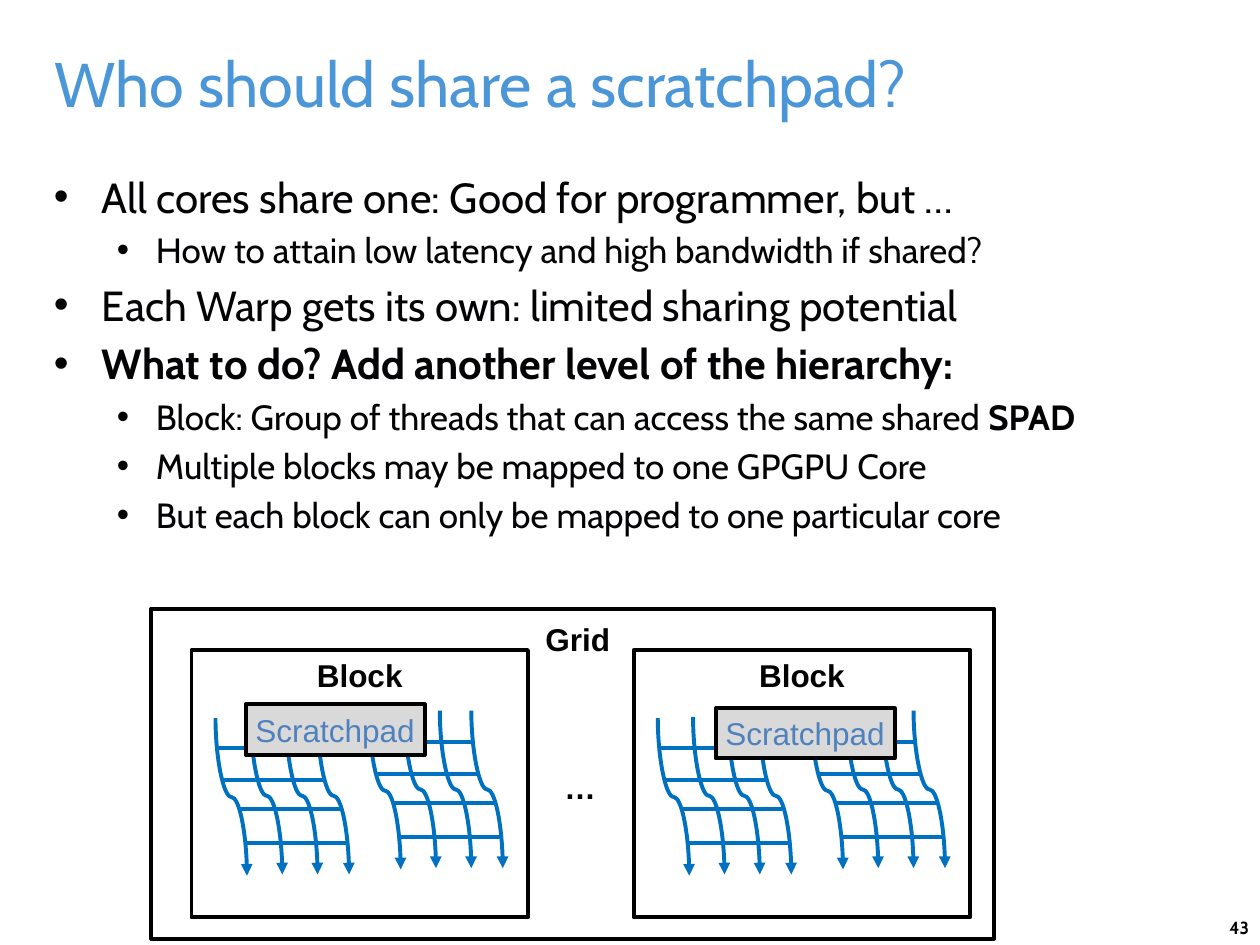
from dataclasses import dataclass

from lxml import etree
from pptx import Presentation
from pptx.dml.color import RGBColor
from pptx.enum import shapes, text
from pptx.oxml import ns
from pptx.util import Inches, Pt

BLACK = RGBColor(0x00, 0x00, 0x00)
INK = RGBColor(0x03, 0x03, 0x05)
TITLE_BLUE = RGBColor(0x4B, 0x96, 0xD7)
THREAD_BLUE = RGBColor(0x00, 0x70, 0xC0)
LABEL_BLUE = RGBColor(0x4F, 0x81, 0xBD)
GREY = RGBColor(0xD9, 0xD9, 0xD9)

LINE_WIDTH = Pt(2.25)
BLOCK_TOP, BLOCK_WIDTH, BLOCK_HEIGHT = 5.16, 2.67, 2.12
THREAD_SHIFT, THREAD_LENGTH = 0.25, 1.25
THREADS = [(0, 0.01), (0.28, 0), (0.56, 0), (0.81, 0)]
RUNGS = [(0, 0.25), (0.05, 0.5), (0.18, 0.73), (0.25, 1.0)]
RUNG_WIDTH = 0.81
WARP_OFFSETS = [(0.19, 0.53), (1.41, 0.48)]


@dataclass
class Bullet:
    words: str
    level: int = 0
    bold: bool = False
    bold_ending: str = ""


@dataclass
class Block:
    left: float
    scratchpad_left: float
    scratchpad_top: float


BULLETS = [
    Bullet("All cores share one: Good for programmer, but …"),
    Bullet("How to attain low latency and high bandwidth if shared?", 1),
    Bullet("Each Warp gets its own: limited sharing potential"),
    Bullet("What to do? Add another level of the hierarchy:", bold=True),
    Bullet("Block: Group of threads that can access the same shared ", 1, bold_ending="SPAD"),
    Bullet("Multiple blocks may be mapped to one GPGPU Core", 1),
    Bullet("But each block can only be mapped to one particular core", 1),
]
BLOCKS = [Block(1.52, 1.95, 5.59), Block(5.03, 5.68, 5.62)]


def set_font(paragraph, name: str, size: float, color: RGBColor, bold: bool = False) -> None:
    font = paragraph.font
    font.name, font.size, font.bold = name, Pt(size), bold
    font.color.rgb = color


def add_child(parent, tag: str, **attributes: str):
    return etree.SubElement(parent, ns.qn(tag), attributes)


def add_label(slide, words: str, left: float, top: float, width: float) -> None:
    label = slide.shapes.add_textbox(*map(Inches, (left, top, width, 0.4)))
    label.text_frame.word_wrap = True
    line = label.text_frame.paragraphs[0]
    line.text, line.alignment = words, text.PP_ALIGN.CENTER
    set_font(line, "Arial", 18, BLACK, bold=True)


def add_frame(slide, left: float, top: float, width: float, height: float):
    frame = slide.shapes.add_shape(
        shapes.MSO_SHAPE.RECTANGLE, *map(Inches, (left, top, width, height)))
    frame.shadow.inherit = False
    frame.fill.background()
    frame.line.color.rgb, frame.line.width = BLACK, LINE_WIDTH
    return frame


def add_line(group, kind, x1: float, y1: float, x2: float, y2: float):
    line = group.shapes.add_connector(kind, *map(Inches, (x1, y1, x2, y2)))
    line.line.color.rgb, line.line.width = THREAD_BLUE, LINE_WIDTH
    add_child(line._element.spPr, "a:effectLst")
    return line


def add_thread(group, x: float, y: float) -> None:
    """Curved arrow running down from (x, y): a flipped curve turned by 270 degrees."""
    center_x, center_y = x + THREAD_SHIFT / 2, y + THREAD_LENGTH / 2
    half_length, half_shift = THREAD_LENGTH / 2, THREAD_SHIFT / 2
    thread = add_line(group, shapes.MSO_CONNECTOR.CURVE,
                      center_x + half_length, center_y - half_shift,
                      center_x - half_length, center_y + half_shift)
    thread._element.spPr.find(ns.qn("a:xfrm")).set("rot", str(270 * 60000))
    add_child(thread._element.spPr.find(ns.qn("a:ln")), "a:tailEnd", type="triangle")


def add_warp(slide, left: float, top: float) -> None:
    warp = slide.shapes.add_group_shape()
    for dx, dy in THREADS:
        add_thread(warp, left + dx, top + dy)
    for dx, dy in RUNGS:
        add_line(warp, shapes.MSO_CONNECTOR.STRAIGHT, left + dx, top + dy,
                 left + dx + RUNG_WIDTH, top + dy)


def add_block(slide, block: Block) -> None:
    for dx, dy in WARP_OFFSETS:
        add_warp(slide, block.left + dx, BLOCK_TOP + dy)
    add_label(slide, "Block", block.left, BLOCK_TOP, BLOCK_WIDTH)
    add_frame(slide, block.left, BLOCK_TOP, BLOCK_WIDTH, BLOCK_HEIGHT)

    scratchpad = add_frame(slide, block.scratchpad_left, block.scratchpad_top, 1.42, 0.4)
    scratchpad.fill.solid()
    scratchpad.fill.fore_color.rgb = GREY
    scratchpad.text_frame.word_wrap = False
    scratchpad.text_frame.vertical_anchor = text.MSO_ANCHOR.MIDDLE
    line = scratchpad.text_frame.paragraphs[0]
    line.text, line.alignment = "Scratchpad", text.PP_ALIGN.CENTER
    set_font(line, "Arial", 18, LABEL_BLUE)


def add_bullet(paragraph, bullet: Bullet) -> None:
    size, margin, hanging = [(24, 0.38, 0.38), (20, 0.81, 0.31)][bullet.level]
    paragraph.level = bullet.level
    paragraph.space_before = Pt(size * 0.2)
    properties = paragraph._p.get_or_add_pPr()
    properties.set("marL", str(Inches(margin)))
    properties.set("indent", str(-Inches(hanging)))
    add_child(add_child(properties, "a:buClr"), "a:srgbClr", val=str(INK))
    add_child(properties, "a:buFont", typeface="Arial")
    add_child(properties, "a:buChar", char="•")
    set_font(paragraph, "Cabin", size, INK, bullet.bold)
    paragraph.add_run().text = bullet.words
    if bullet.bold_ending:
        ending = paragraph.add_run()
        ending.text, ending.font.bold = bullet.bold_ending, True


def main() -> None:
    deck = Presentation()
    deck.slide_width, deck.slide_height = Inches(10), Inches(7.5)
    slide = deck.slides.add_slide(deck.slide_layouts[5])

    # Title
    title = slide.shapes.title
    title.left, title.top, title.width, title.height = map(Inches, (0.33, 0.25, 9.33, 0.75))
    title.text_frame.text = "Who should share a scratchpad?"
    title.text_frame.vertical_anchor = text.MSO_ANCHOR.BOTTOM
    title.text_frame.auto_size = text.MSO_AUTO_SIZE.NONE
    heading = title.text_frame.paragraphs[0]
    heading.alignment = text.PP_ALIGN.LEFT
    set_font(heading, "Cabin", 36, TITLE_BLUE)

    # Bullets
    body = slide.shapes.add_textbox(*map(Inches, (0.33, 1.31, 9.33, 5.52))).text_frame
    body.word_wrap = True
    for index, bullet in enumerate(BULLETS):
        add_bullet(body.add_paragraph() if index else body.paragraphs[0], bullet)

    # Grid of blocks
    add_frame(slide, 1.2, 4.83, 6.69, 2.62)
    for block in BLOCKS:
        add_block(slide, block)
    add_label(slide, "…", 4.21, 6.05, 0.79)
    add_label(slide, "Grid", 4.19, 4.87, 0.79)

    # Slide number
    number = slide.shapes.add_textbox(*map(Inches, (9.66, 7.23, 0.44, 0.27))).text_frame
    number.word_wrap = False
    number.text = "43"
    set_font(number.paragraphs[0], "Cabin", 10, BLACK, bold=True)

    deck.save("out.pptx")


if __name__ == "__main__":
    main()
